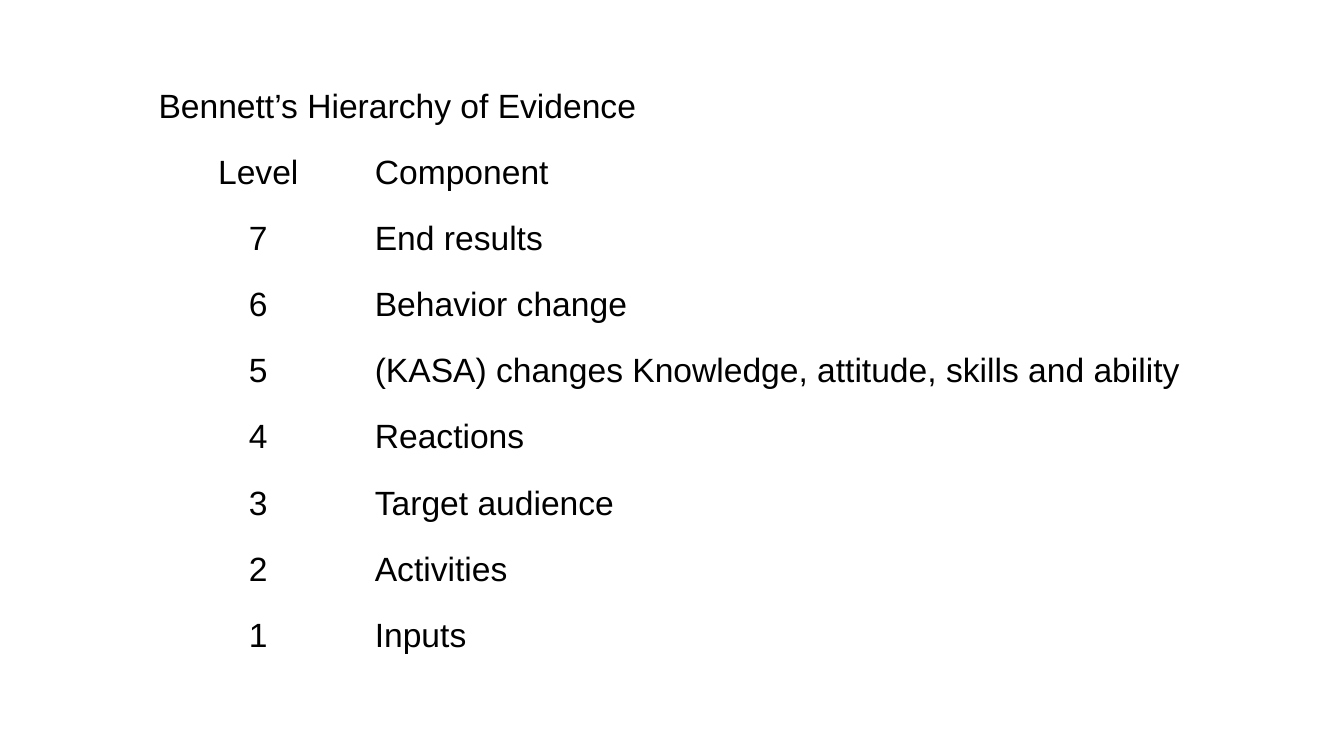
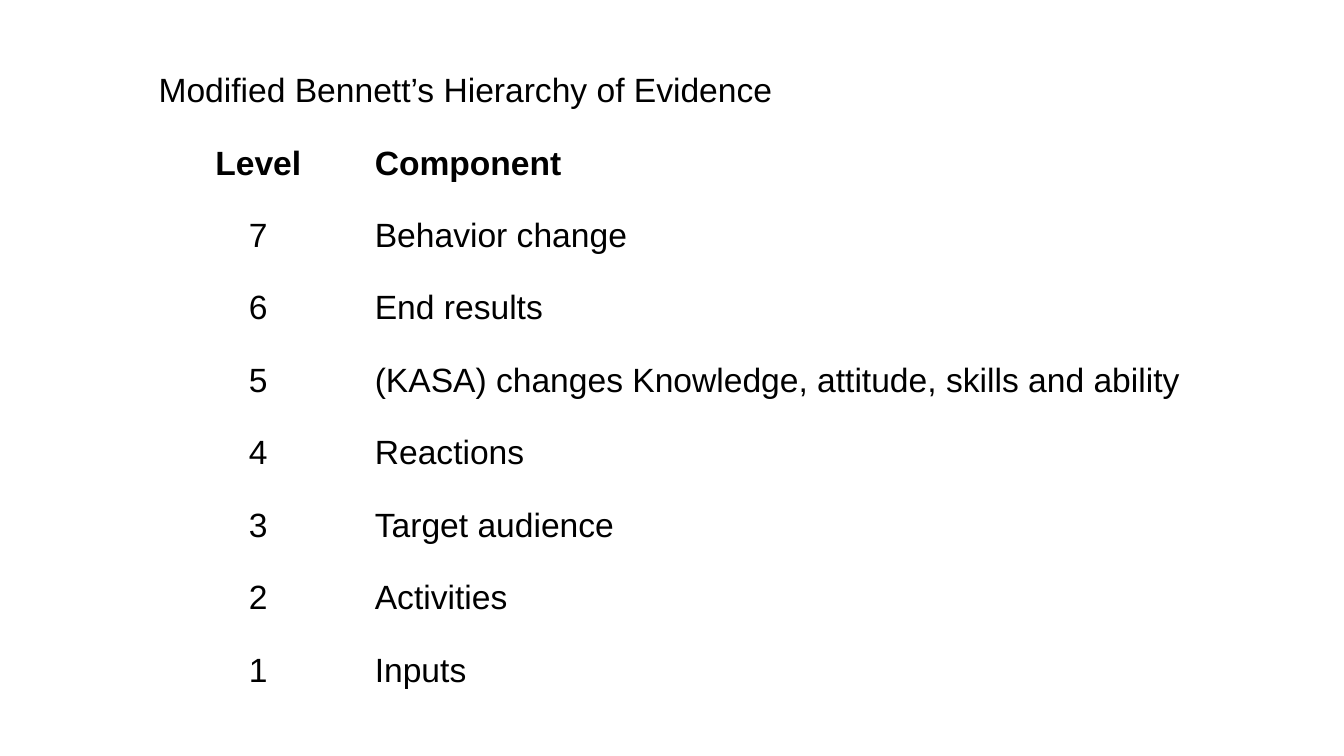
"""Build two slides comparing the original and modified hierarchy of evidence."""
from dataclasses import dataclass

from pptx import Presentation
from pptx import util as u
from pptx.dml import color
from pptx.enum import text


@dataclass(frozen=True)
class Theme:
    font: str = "Arial"
    size: int = 24
    ink: str = "000000"
    line_spacing: float = 1.5


THEME = Theme()
PX = 9525
LEFT = 143
COLUMNS = (206, 849)
MARGIN_X, MARGIN_Y = 8, 4
BLANK_LAYOUT = 6

LOWER_COMPONENTS = [
    "(KASA) changes Knowledge, attitude, skills and ability",
    "Reactions",
    "Target audience",
    "Activities",
    "Inputs",
]
HIERARCHIES = [
    dict(title="Bennett’s Hierarchy of Evidence", top=62, row_height=63,
         bold_header=False, upper=["End results", "Behavior change"]),
    dict(title="Modified Bennett’s Hierarchy of Evidence", top=47, row_height=69,
         bold_header=True, upper=["Behavior change", "End results"]),
]


def write(cell, content, align=text.PP_ALIGN.LEFT, bold=False):
    cell.fill.background()
    cell.margin_left = cell.margin_right = MARGIN_X * PX
    cell.margin_top = cell.margin_bottom = MARGIN_Y * PX
    cell.vertical_anchor = text.MSO_ANCHOR.TOP
    paragraph = cell.text_frame.paragraphs[0]
    paragraph.alignment = align
    paragraph.line_spacing = THEME.line_spacing
    run = paragraph.add_run()
    run.text = content
    run.font.name = THEME.font
    run.font.size = u.Pt(THEME.size)
    run.font.bold = bold
    run.font.color.rgb = color.RGBColor.from_string(THEME.ink)


presentation = Presentation()
presentation.slide_width = 1280 * PX
presentation.slide_height = 720 * PX

for hierarchy in HIERARCHIES:
    slide = presentation.slides.add_slide(presentation.slide_layouts[BLANK_LAYOUT])
    components = hierarchy["upper"] + LOWER_COMPONENTS
    levels = range(len(components), 0, -1)
    entries = [("Level", "Component"), *zip(map(str, levels), components)]
    row_count = len(entries) + 1

    table = slide.shapes.add_table(
        row_count, len(COLUMNS), LEFT * PX, hierarchy["top"] * PX,
        sum(COLUMNS) * PX, row_count * hierarchy["row_height"] * PX,
    ).table
    table.first_row = table.horz_banding = False
    for column, width in zip(table.columns, COLUMNS):
        column.width = width * PX

    table.cell(0, 0).merge(table.cell(0, 1))
    write(table.cell(0, 0), hierarchy["title"])
    for row, (level, component) in enumerate(entries, start=1):
        bold = row == 1 and hierarchy["bold_header"]
        write(table.cell(row, 0), level, align=text.PP_ALIGN.CENTER, bold=bold)
        write(table.cell(row, 1), component, bold=bold)

presentation.save("out.pptx")
